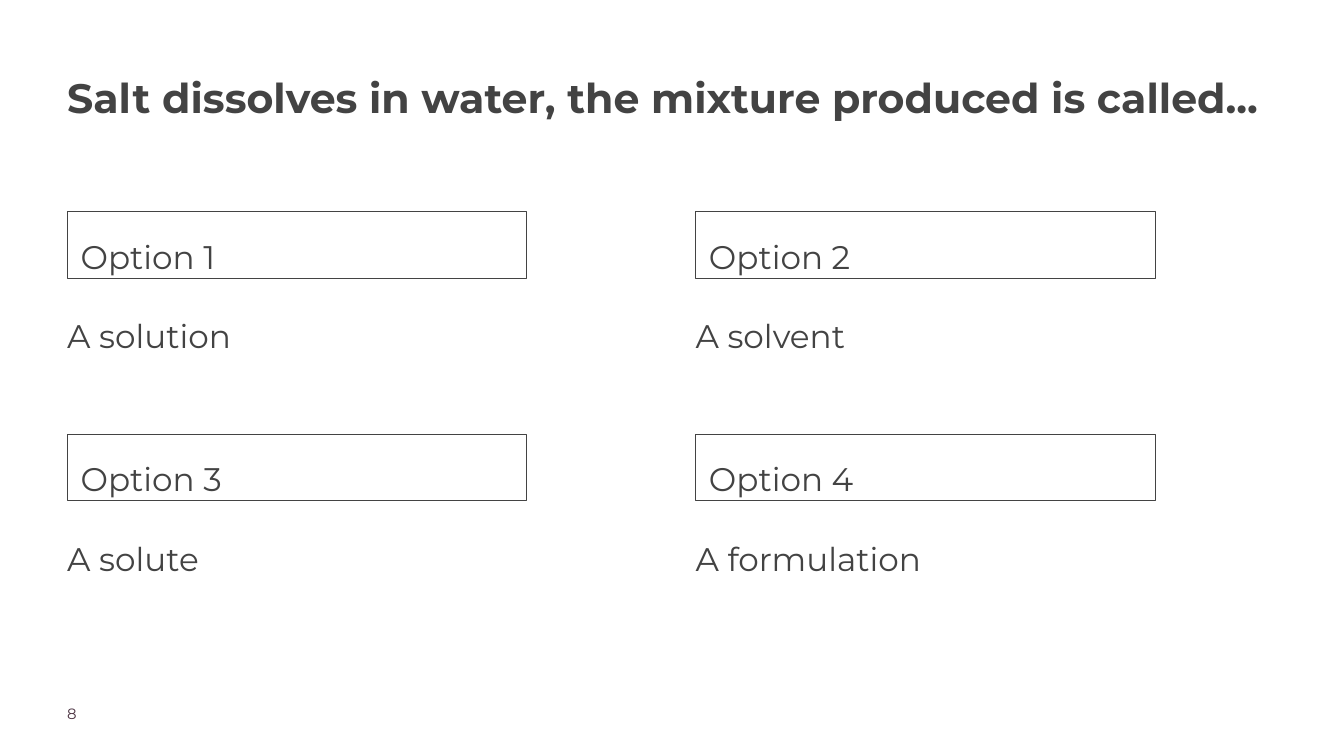
from pptx import Presentation, util as u
from pptx.dml.color import RGBColor
from pptx.enum import shapes, text
from pptx.oxml.ns import qn

HUES = {"ink": "434343", "page": "FFFFFF", "number": "4B3241"}
FACE = "Montserrat"
LEFT, TOP = 1, 3.15
COL, ROW = 9.35, 3.31  # pitch of the answer grid
DROP = 1.38  # from an option box to its answer
COUNT = 2  # answers in a row
ANSWERS = ["A solution", "A solvent", "A solute", "A formulation"]


def hue(name):
    return RGBColor.from_string(HUES[name])


def place(shape, left, top, width, height):
    shape.left, shape.top = u.Inches(left), u.Inches(top)
    shape.width, shape.height = u.Inches(width), u.Inches(height)


def write(shape, words, size, ink="ink", bold=False, lead=1.0, after=0, pad=0):
    """Fill a shape with one left-aligned paragraph that has no bullet."""
    frame = shape.text_frame
    frame.word_wrap = True
    frame.auto_size = text.MSO_AUTO_SIZE.NONE
    frame.vertical_anchor = text.MSO_ANCHOR.TOP
    frame.margin_left = frame.margin_right = u.Inches(pad)
    frame.margin_top = frame.margin_bottom = u.Inches(pad)
    para = frame.paragraphs[0]
    props = para._p.get_or_add_pPr()
    props.set("marL", "0")
    props.set("indent", "0")
    props.append(props.makeelement(qn("a:buNone"), {}))
    para.alignment = text.PP_ALIGN.LEFT
    para.line_spacing = lead
    para.space_before, para.space_after = u.Pt(0), u.Pt(after)
    run = para.add_run()
    run.text = words
    run.font.name, run.font.size, run.font.bold = FACE, u.Pt(size), bold
    run.font.color.rgb = hue(ink)


def add_title(slide, words):
    title = slide.shapes.title
    place(title, LEFT, 0.97, 17.99, 1.78)
    write(title, words, 44, bold=True, lead=1.15)


def add_label(slide, words, left, top):
    box = slide.shapes.add_shape(
        shapes.MSO_SHAPE.RECTANGLE,
        u.Inches(left), u.Inches(top), u.Inches(6.84), u.Inches(0.99))
    box.shadow.inherit = False
    box.fill.solid()
    box.fill.fore_color.rgb = hue("page")
    box.line.color.rgb = hue("ink")
    box.line.width = u.Pt(0.75)
    write(box, words, 35, lead=1.3, pad=0.2)


def set_answer(holder, words, left, top):
    place(holder, left, top, 8.64, 1.38)
    write(holder, words, 35, lead=1.3, after=20)


def add_number(slide, words):
    box = slide.shapes.add_textbox(
        u.Inches(LEFT), u.Inches(10.48), u.Inches(1.57), u.Inches(0.39))
    write(box, words, 16, ink="number")


def main():
    deck = Presentation()
    deck.slide_width, deck.slide_height = u.Inches(20), u.Inches(11.25)
    # The comparison layout has a title and four body placeholders.
    slide = deck.slides.add_slide(deck.slide_layouts.get_by_name("Comparison"))
    slide.background.fill.solid()
    slide.background.fill.fore_color.rgb = hue("page")

    add_title(slide, "Salt dissolves in water, the mixture produced is called...")
    bodies = list(slide.placeholders)[1:]
    for i, (body, answer) in enumerate(zip(bodies, ANSWERS)):
        row, col = divmod(i, COUNT)
        left, top = LEFT + col * COL, TOP + row * ROW
        set_answer(body, answer, left, top + DROP)
        add_label(slide, f"Option {i + 1}", left, top)
    add_number(slide, "8")
    deck.save("out.pptx")


if __name__ == "__main__":
    main()
